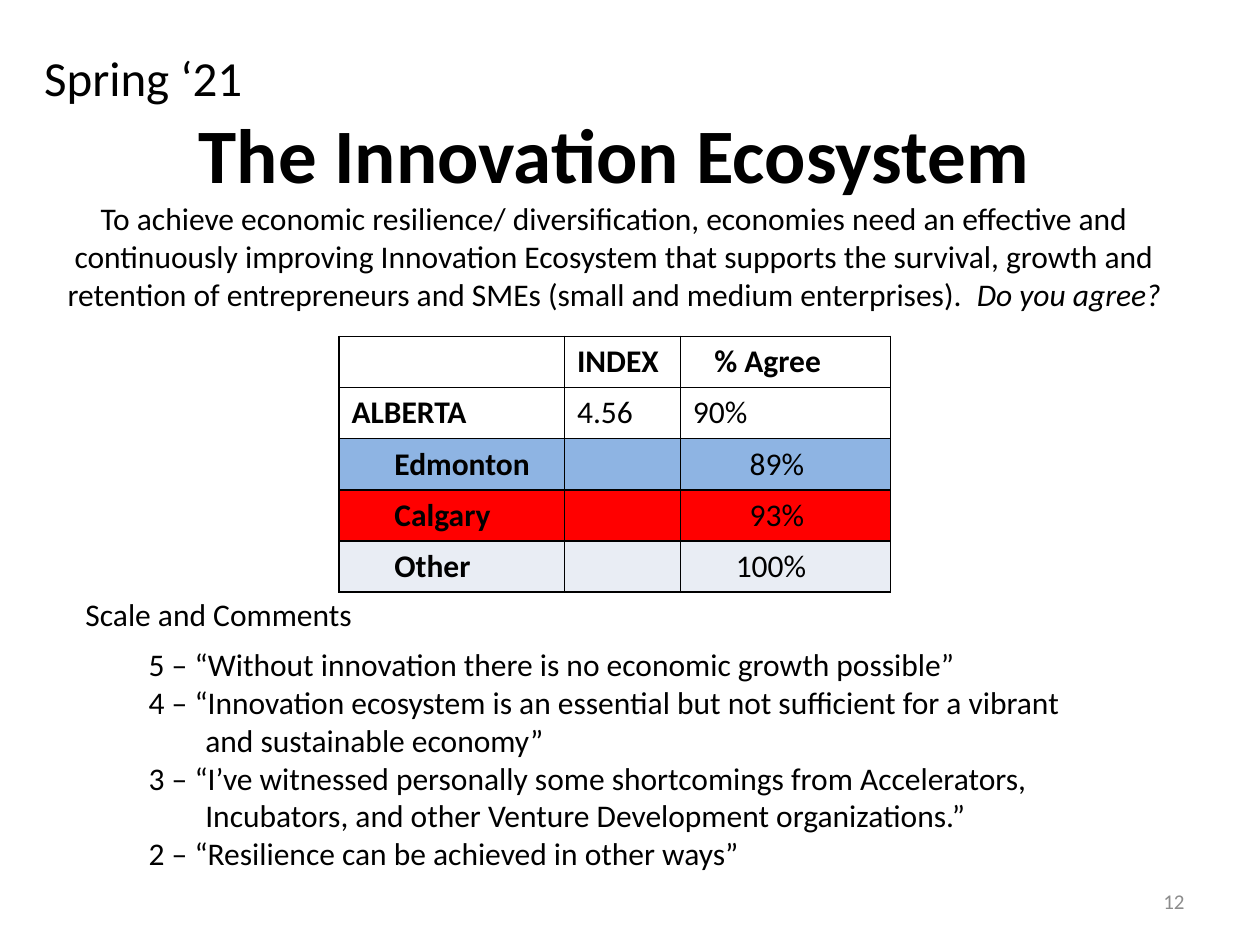
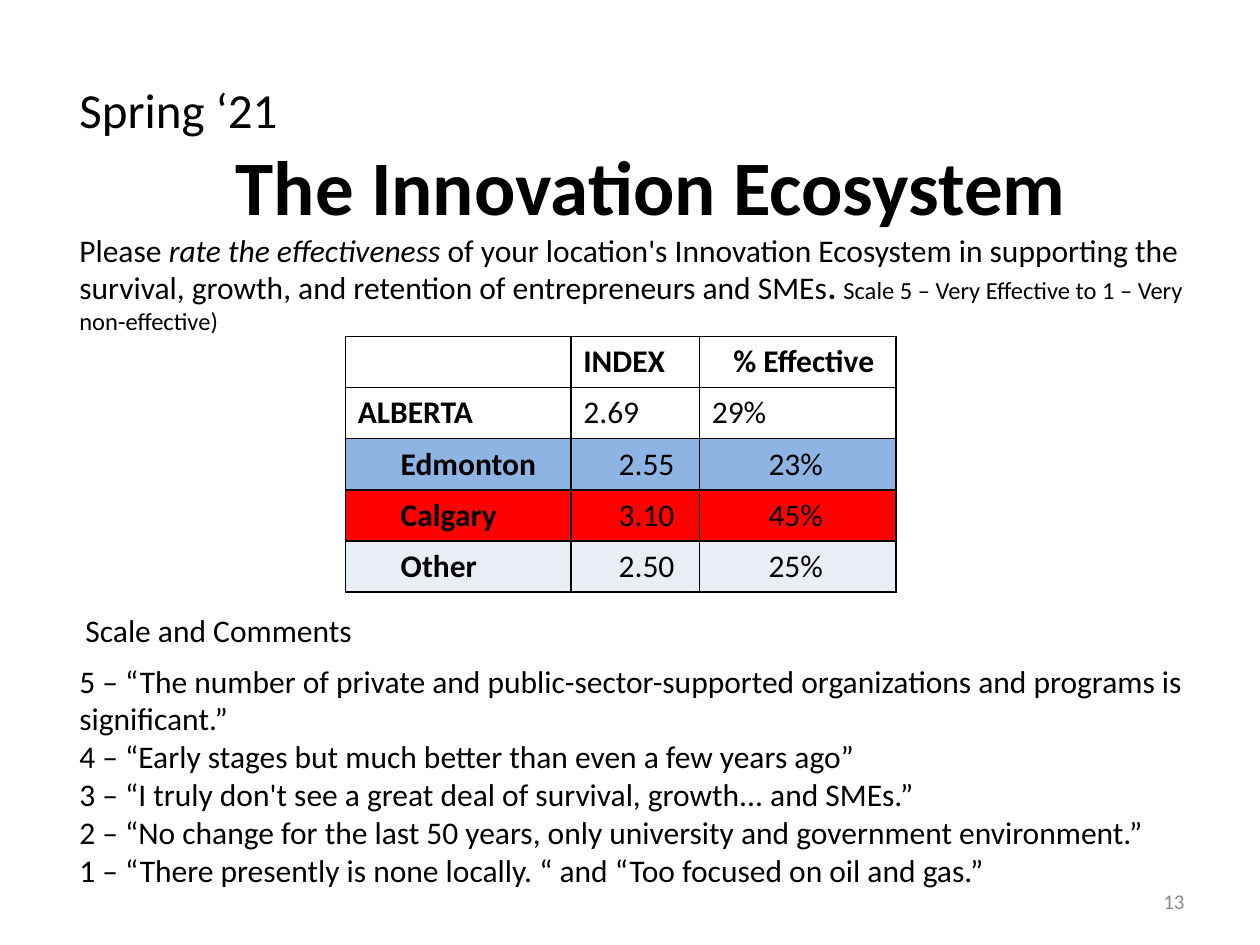
from lxml.etree import SubElement
from pptx import Presentation
from pptx.dml.color import RGBColor
from pptx.enum.text import MSO_ANCHOR as Anchor, MSO_AUTO_SIZE as AutoSize, PP_ALIGN as Align
from pptx.oxml import parse_xml
from pptx.oxml.ns import nsdecls, qn
from pptx.util import Inches, Pt

FONT = "Calibri"
BLACK, GREY = "000000", "8C8C8C"
ROW_FILLS = [None, None, "8EB4E3", "FF0000", "E9EDF4"]
ROW_NAMES = ["", "ALBERTA", "Edmonton", "Calgary", "Other"]
ROW_HEIGHT = 0.406
NAME_INDENT = 0.34
HEADING = "The Innovation Ecosystem"

surveys = [
    {
        "number": "12",
        "heading_at": (0.25, 0.33, 9.25, 2.22),
        "heading_align": Align.CENTER,
        "heading_indent": 0,
        "question": [
            ("To achieve economic resilience/ diversification, economies need an effective and "
             "continuously improving Innovation Ecosystem that supports the survival, growth and "
             "retention of entrepreneurs and SMEs (small and medium enterprises).  ", {}),
            ("Do you agree?", {"italic": True}),
        ],
        "table_left": 2.69,
        "columns": [1.79, 0.92, 1.67],
        "index": ["INDEX", "4.56", "", "", ""],
        "share": ["% Agree", "90%", "89%", "93%", "100%"],
        "share_indents": [0.17, 0, 0.45, 0.45, 0.34],
        "label_top": 4.67,
        "comments_at": (1.08, 5.07, 7.58, 1.92),
        "hanging": 0.45,
        "comments": [
            "5 – “Without innovation there is no economic growth possible”",
            "4 – “Innovation ecosystem is an essential but not sufficient for a vibrant "
            "and sustainable economy”",
            "3 – “I’ve witnessed personally some shortcomings from Accelerators, "
            "Incubators, and other Venture Development organizations.”",
            "2 – “Resilience can be achieved in other ways”",
        ],
    },
    {
        "number": "13",
        "heading_at": (0.53, 0.58, 9.08, 2.96),
        "heading_align": Align.LEFT,
        "heading_indent": 1.24,
        "question": [
            ("Please ", {}),
            ("rate the effectiveness ", {"italic": True}),
            ("of your location's Innovation Ecosystem in supporting the survival, growth, "
             "and retention of entrepreneurs and SMEs", {}),
            (". ", {"bold": True}),
            ("Scale 5 – Very Effective to 1 – Very non-effective)", {"size": Pt(14)}),
        ],
        "table_left": 2.74,
        "columns": [1.79, 1.02, 1.56],
        "index": ["INDEX", "2.69", "2.55", "3.10", "2.50"],
        "share": ["% Effective", "29%", "23%", "45%", "25%"],
        "share_indents": [0.17, 0, 0.45, 0.45, 0.45],
        "label_top": 4.8,
        "comments_at": (0.53, 5.2, 9.08, 1.92),
        "hanging": 0,
        "comments": [
            "5 – “The number of private and public-sector-supported organizations "
            "and programs is significant.”",
            "4 – “Early stages but much better than even a few years ago”",
            "3 – “I truly don't see a great deal of survival, growth... and SMEs.”",
            "2 – “No change for the last 50 years, only university and government environment.”",
            "1 – “There presently is none locally. “ and “Too focused on oil and gas.”",
        ],
    },
]


def rgb(colour):
    return RGBColor.from_string(colour)


def write(para, spans, size=18, bold=False, colour=BLACK, align=Align.LEFT, indent=0, hanging=0):
    """Fill a paragraph with a string or with (text, font changes) spans, without a bullet."""
    props = para._p.get_or_add_pPr()
    props.set("marL", str(Inches(indent + hanging)))
    props.set("indent", str(-Inches(hanging)))
    SubElement(props, qn("a:buNone"))
    para.alignment = align
    para.space_before = Pt(0)
    para.font.name = FONT
    para.font.size = Pt(size)
    para.font.bold = bold
    para.font.color.rgb = rgb(colour)
    for text, changes in [(spans, {})] if isinstance(spans, str) else spans:
        span = para.add_run()
        span.text = text
        for name, value in changes.items():
            setattr(span.font, name, value)


deck = Presentation()
deck.slide_width, deck.slide_height = Inches(10), Inches(7.5)

for survey in surveys:
    page = deck.slides.add_slide(deck.slide_layouts[1])
    title, comments = page.shapes.title, page.placeholders[1]

    for box, place in [(title, survey["heading_at"]), (comments, survey["comments_at"])]:
        box.left, box.top, box.width, box.height = map(Inches, place)
        box.text_frame.auto_size = AutoSize.NONE
        box.text_frame.vertical_anchor = Anchor.TOP

    heading = title.text_frame
    write(heading.paragraphs[0], "Spring ‘21", 28)
    write(heading.add_paragraph(), HEADING, 44, True,
          align=survey["heading_align"], indent=survey["heading_indent"])
    write(heading.add_paragraph(), survey["question"], align=survey["heading_align"])

    for position, comment in enumerate(survey["comments"]):
        frame = comments.text_frame
        para = frame.add_paragraph() if position else frame.paragraphs[0]
        write(para, comment, hanging=survey["hanging"])

    label = page.shapes.add_textbox(Inches(0.58), Inches(survey["label_top"]), Inches(2.67), Inches(0.4))
    label.text_frame.word_wrap = True
    write(label.text_frame.paragraphs[0], "Scale and Comments")

    footer = page.shapes.add_textbox(Inches(7.17), Inches(6.95), Inches(2.33), Inches(0.4))
    footer.text_frame.word_wrap = True
    footer.text_frame.vertical_anchor = Anchor.MIDDLE
    write(footer.text_frame.paragraphs[0], survey["number"], 12, colour=GREY, align=Align.RIGHT)

    rows = list(zip(ROW_NAMES, survey["index"], survey["share"]))
    table = page.shapes.add_table(
        len(rows), 3, Inches(survey["table_left"]), Inches(2.67),
        Inches(sum(survey["columns"])), Inches(ROW_HEIGHT * len(rows))).table
    table.first_row = table.horz_banding = False
    for column, width in zip(table.columns, survey["columns"]):
        column.width = Inches(width)

    for r, texts in enumerate(rows):
        table.rows[r].height = Inches(ROW_HEIGHT)
        is_city = r > 1
        indents = [NAME_INDENT if is_city else 0, 0.28 if is_city else 0, survey["share_indents"][r]]
        for c, text in enumerate(texts):
            cell = table.cell(r, c)
            if text:
                write(cell.text_frame.paragraphs[0], text, bold=r == 0 or c == 0, indent=indents[c])
            cell_props = cell._tc.get_or_add_tcPr()
            for side in ("lnL", "lnR", "lnT", "lnB"):
                cell_props.append(parse_xml(
                    f'<a:{side} {nsdecls("a")} w="{Pt(1)}"><a:solidFill>'
                    f'<a:srgbClr val="{BLACK}"/></a:solidFill></a:{side}>'))
            if ROW_FILLS[r]:
                cell.fill.solid()
                cell.fill.fore_color.rgb = rgb(ROW_FILLS[r])
            else:
                cell.fill.background()

deck.save("out.pptx")
